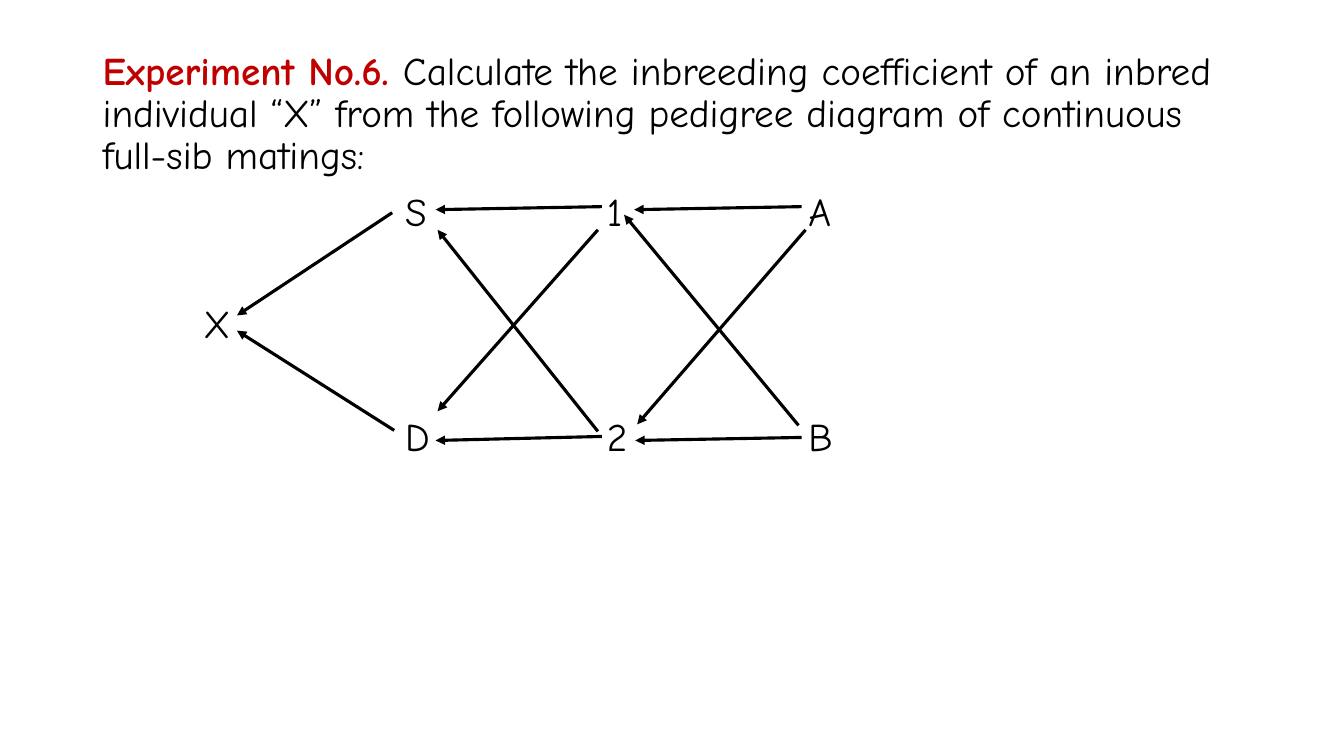
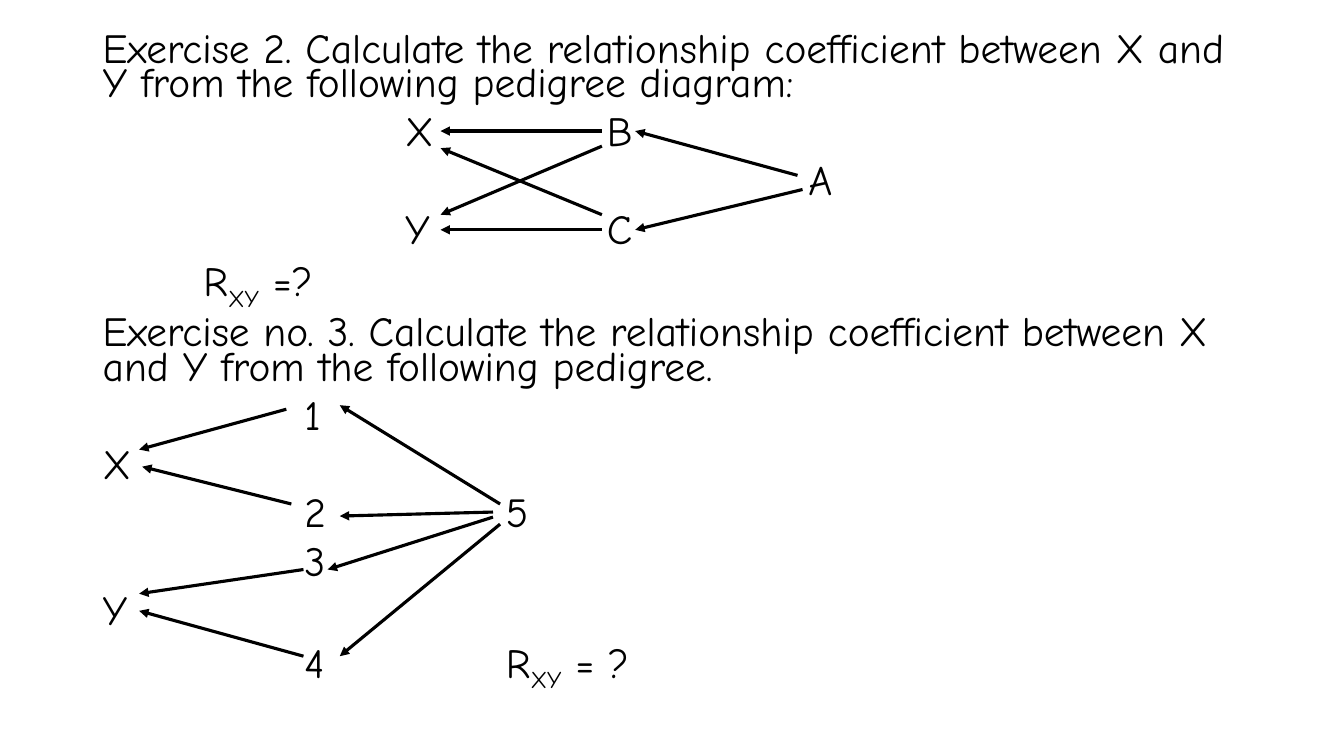
from lxml.etree import SubElement
from pptx import Presentation
from pptx.dml.color import RGBColor
from pptx.enum.shapes import MSO_CONNECTOR as Connector
from pptx.enum.text import MSO_ANCHOR as Anchor
from pptx.oxml.ns import qn
from pptx.util import Emu, Inches, Pt

BLACK = RGBColor(0, 0, 0)
RED = RGBColor(0xC0, 0, 0)
FONT = "Comic Neue"
COLUMN = Inches(1)
PADDING = Inches(0.1)
LEFT, WIDTH = Inches(0.92), Inches(11.5)
GAP = 10
WIDE_GAP = 50.3


def sentence(text, lead=""):
    return {"text": text, "lead": lead}


def row(labels, subscript="", ending="", gap=GAP):
    text = "".join(("\t" if column else "") + label
                   for column, label in labels.items())
    return {"text": text, "columns": [column for column in labels if column],
            "subscript": subscript, "ending": ending, "gap": gap}


def set_tab_stops(paragraph, columns):
    tab_list = SubElement(paragraph._p.get_or_add_pPr(), qn("a:tabLst"))
    for column in columns:
        SubElement(tab_list, qn("a:tab"), pos=str(column * COLUMN), algn="l")


def add_run(paragraph, text):
    run = paragraph.add_run()
    run.text = text
    return run


def fill_paragraph(paragraph, content, size, line_spacing):
    lead = content.get("lead")
    paragraph.text = lead or content["text"]
    if lead:
        add_run(paragraph, content["text"])
    if content.get("columns"):
        set_tab_stops(paragraph, content["columns"])
    if content.get("subscript"):
        subscript = add_run(paragraph, content["subscript"])
        subscript._r.get_or_add_rPr().set("baseline", "-25000")
        add_run(paragraph, content["ending"])
    paragraph.line_spacing = line_spacing
    for run in paragraph.runs:
        run.font.name = FONT
        run.font.size = Pt(size)
        run.font.color.rgb = BLACK
    if lead:
        paragraph.runs[0].font.bold = True
        paragraph.runs[0].font.color.rgb = RED


def add_body(slide, top, height, contents, size, line_spacing):
    text_frame = slide.shapes.add_textbox(LEFT, top, WIDTH, height).text_frame
    text_frame.word_wrap = True
    text_frame.vertical_anchor = Anchor.TOP
    for index, content in enumerate(contents):
        paragraph = text_frame.add_paragraph() if index else text_frame.paragraphs[0]
        fill_paragraph(paragraph, content, size, line_spacing)
        paragraph.space_before = Pt(content.get("gap", GAP) if index else 0)


def add_arrows(slide, top, arrows):
    for start, end in arrows:
        points = [Emu(int(edge + share * COLUMN)) for point in (start, end)
                  for edge, share in zip((LEFT + PADDING, top), point)]
        connector = slide.shapes.add_connector(Connector.STRAIGHT, *points)
        connector.line.color.rgb = BLACK
        connector.line.width = Pt(2.25)
        SubElement(connector.line._get_or_add_ln(), qn("a:tailEnd"), type="triangle")
        SubElement(connector._element.spPr, qn("a:effectLst"))


def add_pedigree_slide(presentation, top, height, contents, arrows, size, line_spacing):
    slide = presentation.slides.add_slide(presentation.slide_layouts[6])
    add_body(slide, top, height, contents, size, line_spacing)
    add_arrows(slide, top, arrows)


INBREEDING_TEXT = [
    sentence("Calculate the inbreeding coefficient of an inbred individual “X” "
             "from the following pedigree diagram of continuous full-sib matings:",
             lead="Experiment No.6. "),
    row({3: "S", 5: "1", 7: "A"}),
    row({1: "X"}, gap=WIDE_GAP),
    row({3: "D", 5: "2", 7: "B"}, gap=WIDE_GAP),
]
INBREEDING_ARROWS = [
    ((2.87, 1.65), (1.33, 2.67)),
    ((2.89, 3.81), (1.33, 2.82)),
    ((4.95, 1.59), (3.3, 1.62)),
    ((4.91, 3.82), (3.32, 1.82)),
    ((4.91, 1.82), (3.32, 3.62)),
    ((4.95, 3.87), (3.3, 3.91)),
    ((6.93, 1.59), (5.27, 1.62)),
    ((6.9, 3.76), (5.17, 1.67)),
    ((6.97, 1.82), (5.3, 3.75)),
    ((6.93, 3.88), (5.28, 3.91)),
]

RELATIONSHIP_TEXT = [
    sentence("Exercise 2. Calculate the relationship coefficient between X and Y "
             "from the following pedigree diagram:"),
    row({3: "X", 5: "B"}),
    row({7: "A"}),
    row({3: "Y", 5: "C"}),
    row({1: "R"}, "XY", " =?"),
    sentence("Exercise no. 3. Calculate the relationship coefficient between X and Y "
             "from the following pedigree."),
    row({2: "1"}),
    row({0: "X"}),
    row({2: "2", 4: "5"}),
    row({2: "3"}),
    row({0: "Y"}),
    row({2: "4", 4: "R"}, "XY", " = ?"),
]
COUSIN_ARROWS = [
    ((4.95, 1), (3.35, 1)),
    ((4.95, 1.15), (3.35, 1.83)),
    ((4.95, 1.83), (3.35, 1.17)),
    ((4.95, 1.98), (3.35, 1.98)),
    ((6.89, 1.44), (5.28, 1)),
    ((6.94, 1.58), (5.28, 1.98)),
]
COMMON_PARENT_ARROWS = [
    ((3.94, 4.7), (2.35, 3.72)),
    ((3.87, 4.78), (2.35, 4.82)),
    ((3.87, 4.83), (2.23, 5.35)),
    ((3.94, 4.9), (2.35, 6.21)),
    ((1.82, 3.76), (0.36, 4.16)),
    ((1.87, 4.7), (0.39, 4.33)),
    ((1.99, 5.35), (0.36, 5.59)),
    ((1.99, 6.21), (0.36, 5.76)),
]


def main():
    presentation = Presentation()
    presentation.slide_width = Inches(13.33)
    presentation.slide_height = Inches(7.5)
    add_pedigree_slide(presentation, Inches(0.46), Inches(6.29),
                       INBREEDING_TEXT, INBREEDING_ARROWS, 28, 0.9)
    add_pedigree_slide(presentation, Inches(0.3), Inches(6.79), RELATIONSHIP_TEXT,
                       COUSIN_ARROWS + COMMON_PARENT_ARROWS, 29.6, 0.7)
    presentation.save("out.pptx")


if __name__ == "__main__":
    main()
